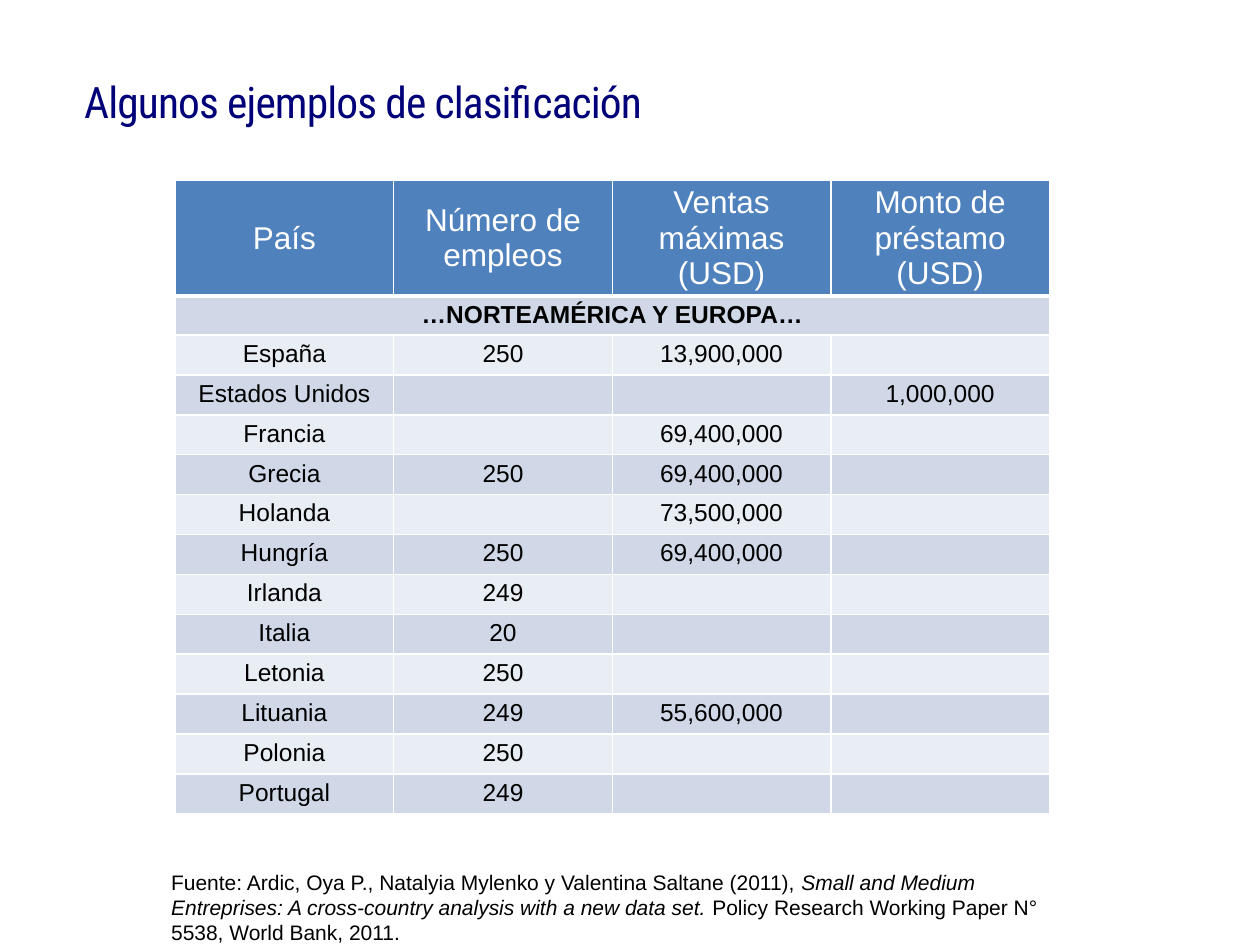
from lxml.etree import SubElement
from pptx import Presentation
from pptx.dml.color import RGBColor
from pptx.enum.text import MSO_ANCHOR, MSO_AUTO_SIZE, PP_ALIGN
from pptx.oxml.ns import qn
from pptx.util import Inches, Pt

NAVY = RGBColor(0x00, 0x00, 0x78)
BLACK = RGBColor(0x00, 0x00, 0x00)
WHITE = RGBColor(0xFF, 0xFF, 0xFF)
HEADER_BLUE = RGBColor(0x4F, 0x81, 0xBD)
BANDS = (RGBColor(0xD0, 0xD8, 0xE8), RGBColor(0xE9, 0xED, 0xF4))

HEADINGS = ("País", "Número de empleos", "Ventas máximas\n(USD)", "Monto de préstamo\n(USD)")
REGION = "…NORTEAMÉRICA Y EUROPA…"
COUNTRIES = (
    ("España", "250", "13,900,000", ""),
    ("Estados Unidos", "", "", "1,000,000"),
    ("Francia", "", "69,400,000", ""),
    ("Grecia", "250", "69,400,000", ""),
    ("Holanda", "", "73,500,000", ""),
    ("Hungría", "250", "69,400,000", ""),
    ("Irlanda", "249", "", ""),
    ("Italia", "20", "", ""),
    ("Letonia", "250", "", ""),
    ("Lituania", "249", "55,600,000", ""),
    ("Polonia", "250", "", ""),
    ("Portugal", "249", "", ""),
)
SOURCE = (
    ("Fuente: Ardic, Oya P., Natalyia Mylenko y Valentina Saltane (2011), ", False),
    ("Small and Medium Entreprises: A cross-country analysis with a new data set. ", True),
    ("Policy Research Working Paper N° 5538, World Bank, 2011.", False),
)


def write_text(paragraph, text, size, color, font="Arial", bold=False, italic=False,
               align=PP_ALIGN.LEFT, line_spacing=None, tracking=None):
    paragraph.alignment = align
    if line_spacing:
        paragraph.line_spacing = line_spacing
    if not text:
        SubElement(paragraph._p, qn("a:endParaRPr"), sz=str(size * 100))
        return
    run = paragraph.add_run()
    run.text = text
    run.font.name = font
    run.font.size = Pt(size)
    run.font.bold = bold
    run.font.italic = italic
    run.font.color.rgb = color
    if tracking:
        run.font._element.set("spc", str(int(tracking * 100)))


def add_text_box(slide, left, top, width, height, anchor=MSO_ANCHOR.TOP):
    frame = slide.shapes.add_textbox(Inches(left), Inches(top), Inches(width), Inches(height)).text_frame
    frame.word_wrap = True
    frame.vertical_anchor = anchor
    return frame


def add_borders(cell, bottom_width):
    properties = cell._tc.get_or_add_tcPr()
    for side, width in (("lnL", 1), ("lnR", 1), ("lnT", 1), ("lnB", bottom_width)):
        border = SubElement(properties, qn(f"a:{side}"), w=str(Pt(width)))
        fill = SubElement(border, qn("a:solidFill"))
        SubElement(fill, qn("a:srgbClr"), val=str(WHITE))


def fill_cell(cell, text, background, size=14, color=BLACK, bold=False,
              anchor=MSO_ANCHOR.TOP, bottom_width=1):
    add_borders(cell, bottom_width)
    cell.fill.solid()
    cell.fill.fore_color.rgb = background
    cell.margin_left = cell.margin_right = Inches(0.06)
    cell.margin_top = cell.margin_bottom = Inches(0.04)
    cell.vertical_anchor = anchor
    frame = cell.text_frame
    for index, line in enumerate(text.split("\n")):
        paragraph = frame.add_paragraph() if index else frame.paragraphs[0]
        write_text(paragraph, line, size, color, bold=bold, align=PP_ALIGN.CENTER)


def add_classification_table(slide):
    body = ((REGION, "", "", ""),) + COUNTRIES
    table = slide.shapes.add_table(
        len(body) + 1, len(HEADINGS), Inches(1.39), Inches(1.43), Inches(6.94), Inches(4.97)
    ).table
    for row in table.rows:
        row.height = Inches(0.31)
    table.rows[0].height = Inches(0.91)
    for column, heading in enumerate(HEADINGS):
        fill_cell(table.cell(0, column), heading, HEADER_BLUE, size=18, color=WHITE,
                  anchor=MSO_ANCHOR.MIDDLE, bottom_width=3)
    for index, values in enumerate(body):
        for column, value in enumerate(values):
            fill_cell(table.cell(index + 1, column), value, BANDS[index % 2], bold=index == 0)
    table.cell(1, 0).merge(table.cell(1, len(HEADINGS) - 1))


def add_source(slide):
    frame = add_text_box(slide, 1.26, 6.85, 7.45, 0.71)
    frame.auto_size = MSO_AUTO_SIZE.SHAPE_TO_FIT_TEXT
    for text, italic in SOURCE:
        write_text(frame.paragraphs[0], text, 12, BLACK, italic=italic)


def add_title(slide):
    frame = add_text_box(slide, 0.57, 0.42, 5.07, 0.62, anchor=MSO_ANCHOR.BOTTOM)
    write_text(frame.paragraphs[0], "Algunos ejemplos de clasificación", 24.8, NAVY,
               font="Roboto Condensed", line_spacing=0.65, tracking=-0.5)


def main():
    presentation = Presentation()
    presentation.slide_width = Inches(10)
    presentation.slide_height = Inches(7.5)
    slide = presentation.slides.add_slide(presentation.slide_layouts[6])
    add_classification_table(slide)
    add_source(slide)
    add_title(slide)
    presentation.save("out.pptx")


if __name__ == "__main__":
    main()
